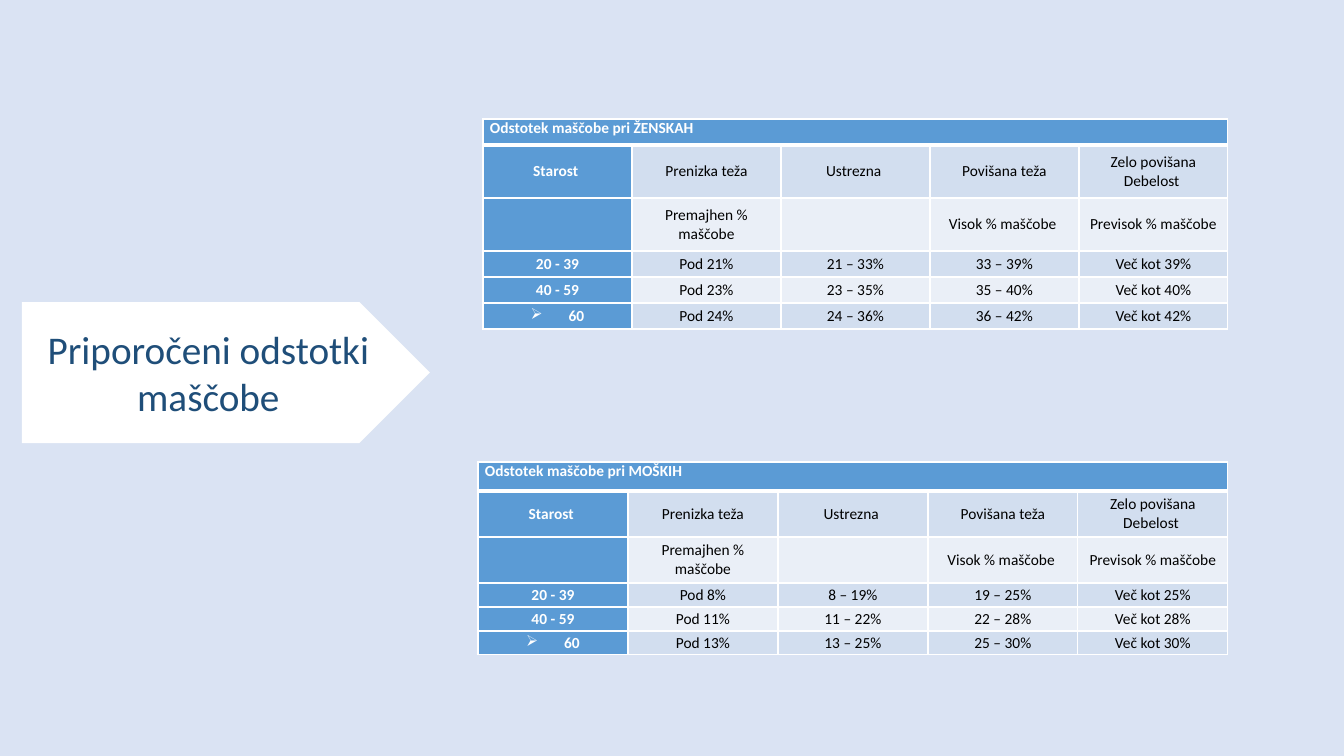
from dataclasses import dataclass

from lxml.etree import SubElement
from pptx import Presentation
from pptx.dml.color import RGBColor
from pptx.enum.shapes import MSO_SHAPE
from pptx.enum.text import MSO_ANCHOR, PP_ALIGN
from pptx.oxml.ns import qn
from pptx.util import Emu, Pt


@dataclass(frozen=True)
class Theme:
    """Colours, font and type sizes of the slide."""
    background: str = "DAE3F3"
    white: str = "FFFFFF"
    title: str = "1F4E79"
    heading: str = "5B9BD5"
    bands: tuple = ("EAEFF7", "D2DEEF")
    body: str = "000000"
    font: str = "Calibri"
    title_size: int = 28
    table_size: int = 11
    thin: int = 1
    thick: int = 3


def px(length):
    """Turn pixels into EMU."""
    return Emu(round(length * 914400 / 100.8))


class SlideBuilder:
    """Holds the theme and the current slide, and adds elements to it."""

    def __init__(self, slide, theme):
        """Keep the slide and paint its background."""
        self.slide, self.theme = slide, theme
        self.paint(slide.background.fill, theme.background)

    def paint(self, fill, color):
        """Make a fill solid in one colour."""
        fill.solid()
        fill.fore_color.rgb = RGBColor.from_string(color)

    def add_text(self, paragraph, text, size, color, bold=False):
        """Add one styled run to a paragraph."""
        run = paragraph.add_run()
        run.text = text
        run.font.name, run.font.size, run.font.bold = self.theme.font, Pt(size), bold
        run.font.color.rgb = RGBColor.from_string(color)

    def title_arrow(self, text, left, top, width, height):
        """Add the pentagon that carries the title."""
        arrow = self.slide.shapes.add_shape(
            MSO_SHAPE.PENTAGON, px(left), px(top), px(width), px(height))
        arrow.shadow.inherit = False
        self.paint(arrow.fill, self.theme.white)
        arrow.line.fill.background()
        frame = arrow.text_frame
        frame.word_wrap, frame.vertical_anchor = True, MSO_ANCHOR.MIDDLE
        frame.paragraphs[0].alignment = PP_ALIGN.CENTER
        self.add_text(frame.paragraphs[0], text, self.theme.title_size, self.theme.title)

    def border(self, cell, side, points):
        """Draw one white cell border."""
        line = SubElement(cell._tc.get_or_add_tcPr(), qn(f"a:ln{side}"), w=str(Pt(points)))
        fill = SubElement(line, qn("a:solidFill"))
        SubElement(fill, qn("a:srgbClr"), val=self.theme.white)

    def bullet(self, paragraph, mark):
        """Give a paragraph a hanging bullet."""
        properties = paragraph._p.get_or_add_pPr()
        properties.set("marL", str(px(38)))
        properties.set("indent", str(-px(38)))
        SubElement(properties, qn("a:buChar"), char=mark)

    def cell(self, cell, text, row, column):
        """Style one table cell by its place and fill in its text."""
        theme = self.theme
        is_heading = row == 0 or column == 0
        cell.margin_left = cell.margin_right = px(7)
        cell.margin_top = cell.margin_bottom = 0
        cell.vertical_anchor = MSO_ANCHOR.MIDDLE if row else MSO_ANCHOR.TOP
        for side in "LRTB":
            under_caption = (row, side) in ((0, "B"), (1, "T"))
            self.border(cell, side, theme.thick if under_caption else theme.thin)
        self.paint(cell.fill, theme.heading if is_heading else theme.bands[row % 2])
        for index, line in enumerate(text.split("\n")):
            frame = cell.text_frame
            paragraph = frame.add_paragraph() if index else frame.paragraphs[0]
            if row:
                paragraph.alignment = PP_ALIGN.CENTER
            if line.startswith("➢"):
                self.bullet(paragraph, line[0])
                line = line[1:]
            if line:
                self.add_text(paragraph, line, theme.table_size,
                              theme.white if is_heading else theme.body, is_heading)
            else:
                SubElement(paragraph._p, qn("a:endParaRPr"), sz=str(theme.table_size * 100))

    def fat_table(self, caption, ranges, left, top, column_width, row_heights):
        """Add a table of body fat ranges by age."""
        rows = [[caption, "", "", "", ""], *LEVELS,
                *([age, *values] for age, values in zip(AGES, ranges))]
        columns = len(rows[0])
        table = self.slide.shapes.add_table(
            len(rows), columns, px(left), px(top),
            px(column_width * columns), px(sum(row_heights))).table
        for column in table.columns:
            column.width = px(column_width)
        for row, height in zip(table.rows, row_heights):
            row.height = px(height)
        for row, texts in enumerate(rows):
            for column, text in enumerate(texts):
                self.cell(table.cell(row, column), text, row, column)
        table.cell(0, 0).merge(table.cell(0, columns - 1))


LEVELS = (
    ("Starost ", "Prenizka teža", "Ustrezna ", "Povišana teža", "Zelo povišana\nDebelost "),
    ("", "Premajhen % maščobe", "", "Visok % maščobe ", "Previsok % maščobe"),
)
AGES = ("20 - 39", "40 - 59", "➢60")
WOMEN = (
    ("Pod 21%", "21 – 33%", "33 – 39%", "Več kot 39%"),
    ("Pod 23%", "23 – 35%", "35 – 40%", "Več kot 40%"),
    ("Pod 24%", "24 – 36%", "36 – 42%", "Več kot 42%"),
)
MEN = (
    ("Pod 8%", "8 – 19%", "19 – 25%", "Več kot 25%"),
    ("Pod 11%", "11 – 22%", "22 – 28%", "Več kot 28%"),
    ("Pod 13%", "13 – 25%", "25 – 30%", "Več kot 30%"),
)


def main():
    """Build the slide and save it."""
    deck = Presentation()
    deck.slide_width, deck.slide_height = px(1344), px(756)
    builder = SlideBuilder(deck.slides.add_slide(deck.slide_layouts[6]), Theme())
    builder.title_arrow("Priporočeni odstotki maščobe", 22, 302, 408, 141)
    builder.fat_table("Odstotek maščobe pri ŽENSKAH", WOMEN, 483, 119, 149,
                      (26, 53, 53, 26, 26, 26))
    builder.fat_table("Odstotek maščobe pri MOŠKIH", MEN, 478, 462, 150,
                      (29, 46, 46, 24, 24, 24))
    deck.save("out.pptx")


if __name__ == "__main__":
    main()
